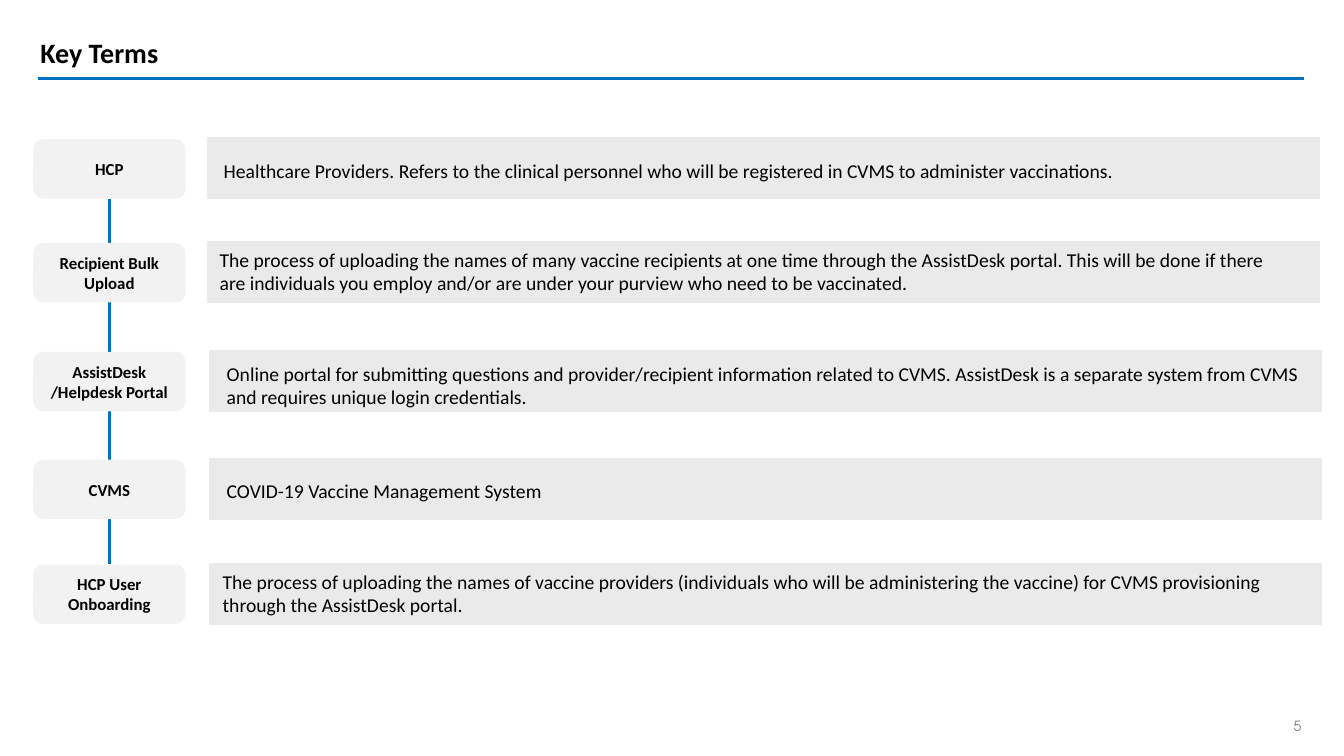
from pptx import Presentation
from pptx import util as u
from pptx.dml.color import RGBColor
from pptx.enum import shapes, text
from pptx.oxml.ns import qn
from lxml import etree

PX = 9144  # EMU per px, 100 px to the inch

BLACK = RGBColor(0x00, 0x00, 0x00)
BLUE = RGBColor(0x00, 0x70, 0xC0)
GREY = RGBColor(0x80, 0x80, 0x80)
TERM_FILL = RGBColor(0xF2, 0xF2, 0xF2)
BAR_FILL = RGBColor(0xEA, 0xEA, 0xEA)

TERM_LEFT, TERM_WIDTH, TERM_HEIGHT = 33, 151, 59
BAR_WIDTH, BAR_HEIGHT = 1103, 60
DEFINITION_WIDTH = 1085

# term, term top, bar left, definition (left, top, height), definition
ROWS = [
    ("HCP", 138, 206, (212, 153, 34),
     "Healthcare Providers. Refers to the clinical personnel who will be "
     "registered in CVMS to administer vaccinations."),
    ("Recipient Bulk Upload", 241, 206, (208, 241, 57),
     "The process of uploading the names of many vaccine recipients at one "
     "time through the AssistDesk portal. This will be done if there are "
     "individuals you employ and/or are under your purview who need to be "
     "vaccinated."),
    ("AssistDesk /Helpdesk Portal", 349, 208, (215, 354, 57),
     "Online portal for submitting questions and provider/recipient "
     "information related to CVMS. AssistDesk is a separate system from CVMS "
     "and requires unique login credentials."),
    ("CVMS", 456, 208, (215, 470, 34), "COVID-19 Vaccine Management System"),
    ("HCP User Onboarding", 560, 208, (211, 560, 57),
     "The process of uploading the names of vaccine providers (individuals "
     "who will be administering the vaccine) for CVMS provisioning through "
     "the AssistDesk portal."),
]


def px(*lengths):
    return [u.Emu(length * PX) for length in lengths]


def write(shape, words, size=14, bold=False, color=BLACK, font="Calibri",
          align=text.PP_ALIGN.LEFT, anchor=text.MSO_ANCHOR.MIDDLE):
    frame = shape.text_frame
    frame.word_wrap = True
    frame.vertical_anchor = anchor
    paragraph = frame.paragraphs[0]
    paragraph.alignment = align
    run = paragraph.add_run()
    run.text = words
    run.font.name = font
    run.font.size = u.Pt(size)
    run.font.bold = bold
    run.font.color.rgb = color


def add_title(slide, words):
    title = slide.shapes.title
    title.left, title.top, title.width, title.height = px(30, 12, 1255, 79)
    title.text_frame.auto_size = text.MSO_AUTO_SIZE.NONE
    write(title, words, size=20, bold=True)


def add_line(slide, *ends):
    line = slide.shapes.add_connector(shapes.MSO_CONNECTOR.STRAIGHT, *px(*ends))
    line.line.color.rgb = BLUE
    line.line.width = u.Pt(2.25)
    etree.SubElement(line._element.spPr, qn("a:effectLst"))
    return line


def add_box(slide, kind, fill, *place):
    box = slide.shapes.add_shape(kind, *px(*place))
    box.shadow.inherit = False
    box.fill.solid()
    box.fill.fore_color.rgb = fill
    box.line.fill.background()
    return box


def add_term(slide, term, top):
    box = add_box(slide, shapes.MSO_SHAPE.ROUNDED_RECTANGLE, TERM_FILL,
                  TERM_LEFT, top, TERM_WIDTH, TERM_HEIGHT)
    write(box, term, size=12, bold=True, align=text.PP_ALIGN.CENTER)
    return box


def add_definition(slide, bar_left, bar_top, place, definition):
    bar = add_box(slide, shapes.MSO_SHAPE.RECTANGLE, BAR_FILL,
                  bar_left, bar_top, BAR_WIDTH, BAR_HEIGHT)
    bar.line.color.rgb = BAR_FILL
    bar.line.width = u.Pt(1)
    left, top, height = place
    box = slide.shapes.add_textbox(*px(left, top, DEFINITION_WIDTH, height))
    write(box, definition, anchor=text.MSO_ANCHOR.TOP)
    box.text_frame.auto_size = text.MSO_AUTO_SIZE.SHAPE_TO_FIT_TEXT


def add_page_number(slide, number):
    box = slide.shapes.add_textbox(*px(1264, 712, 46, 17))
    frame = box.text_frame
    frame.margin_left = frame.margin_right = 0
    frame.margin_top = frame.margin_bottom = 0
    write(box, number, size=10, color=GREY, font="TeX Gyre Adventor",
          align=text.PP_ALIGN.CENTER)


def main():
    presentation = Presentation()
    presentation.slide_width, presentation.slide_height = px(1333, 750)
    slide = presentation.slides.add_slide(presentation.slide_layouts[5])

    add_page_number(slide, "5")
    add_title(slide, "Key Terms")
    add_line(slide, 38, 78, 1293, 78)
    spine = add_line(slide, 108, 197, 108, 560)

    terms = []
    for term, top, bar_left, place, definition in ROWS:
        terms.append(add_term(slide, term, top))
        add_definition(slide, bar_left, top - 1, place, definition)
    spine.begin_connect(terms[0], 2)
    spine.end_connect(terms[-1], 0)

    presentation.save("out.pptx")


if __name__ == "__main__":
    main()
